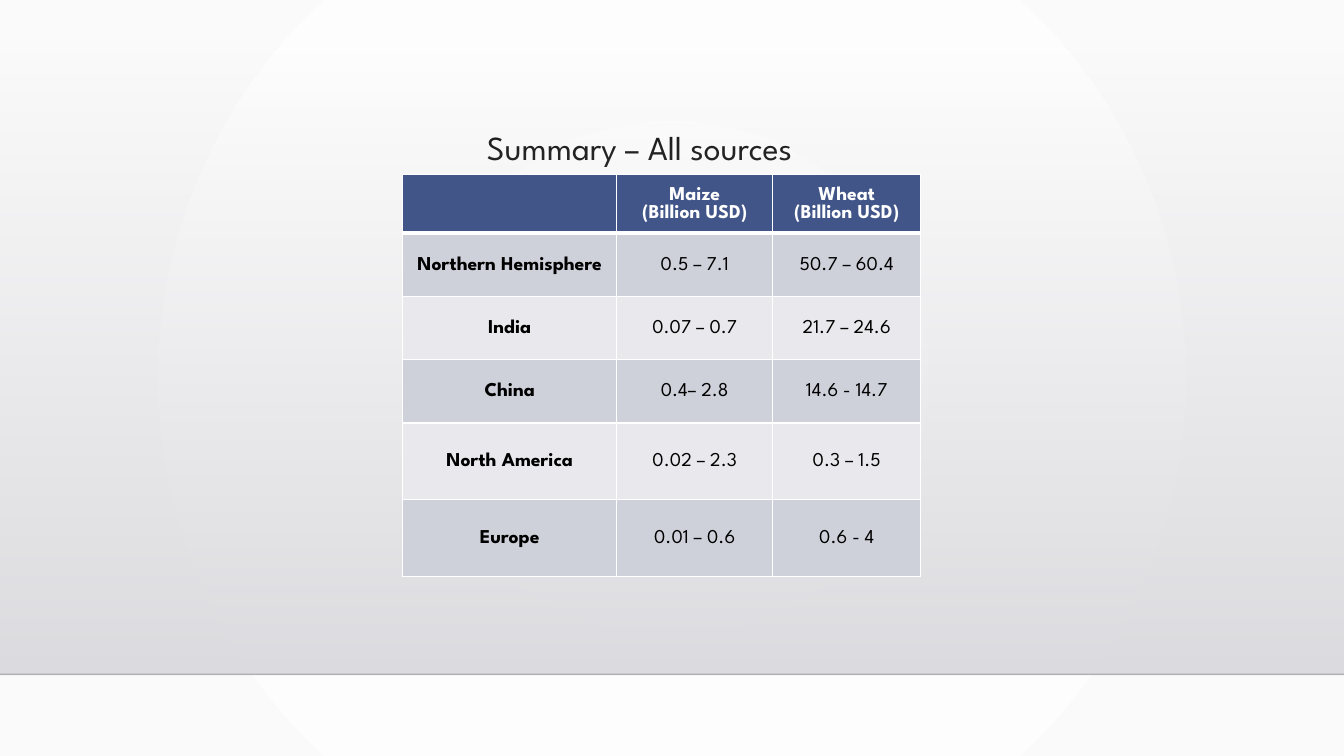
"""Build a one-slide summary table of maize and wheat values."""
from dataclasses import dataclass

from pptx import Presentation
from pptx.dml.color import RGBColor
from pptx.enum.shapes import MSO_CONNECTOR, MSO_SHAPE
from pptx.enum.text import MSO_ANCHOR, PP_ALIGN
from pptx.oxml import parse_xml
from pptx.util import Pt

TITLE = "Summary – All sources"
ROWS = [
    ("", "Maize\n(Billion USD)", "Wheat\n(Billion USD)"),
    ("Northern Hemisphere", "0.5 – 7.1", "50.7 – 60.4"),
    ("India", "0.07 – 0.7", "21.7 – 24.6"),
    ("China", "0.4– 2.8", "14.6 - 14.7"),
    ("North America", "0.02 – 2.3", "0.3 – 1.5"),
    ("Europe", "0.01 – 0.6", "0.6 - 4"),
]
WIDTHS = [153, 111.4, 105.8]
HEIGHTS = [41.8, 45.2, 45.2, 45.2, 54.8, 54.8]
WIDE, HIGH = 960, 540
FLOOR = 481.7
NS = 'xmlns:a="http://schemas.openxmlformats.org/drawingml/2006/main"'


@dataclass(frozen=True)
class Theme:
    """Colours, font and type sizes."""
    font: str = "League Spartan"
    head: str = "415588"
    bands: tuple = ("CFD1DA", "E9E9ED")
    ink: str = "000000"
    white: str = "FFFFFF"
    edge: str = "FAFAFA"
    mist: str = "DCDCE0"
    base: str = "DEDEE2"
    rule: str = "000001"
    big: int = 24
    small: int = 14


LOOK = Theme()


def write(frame, text, size=LOOK.small, color=LOOK.ink, bold=False,
          align=PP_ALIGN.CENTER, space=None):
    """Fill a text frame with formatted lines."""
    frame.text = text
    for para in frame.paragraphs:
        para.alignment = align
        if space:
            para.line_spacing = space
        for run in para.runs:
            font = run.font
            font.name, font.size, font.bold = LOOK.font, Pt(size), bold
            font.color.rgb = RGBColor.from_string(color)


def shade(solid, stops, path):
    """Swap a solid fill element for a gradient."""
    marks = "".join(
        f'<a:gs pos="{pos * 1000}"><a:srgbClr val="{color}">'
        f'<a:alpha val="{alpha * 1000}"/></a:srgbClr></a:gs>'
        for pos, color, alpha in stops)
    grad = parse_xml(f'<a:gradFill {NS} rotWithShape="1"><a:gsLst>{marks}'
                     f'</a:gsLst>{path}</a:gradFill>')
    solid.getparent().replace(solid, grad)


def border(cell, top, base):
    """Draw white lines on the four sides of a cell."""
    props = cell._tc.get_or_add_tcPr()
    sides = {"lnL": 1, "lnR": 1, "lnT": top, "lnB": base}
    for spot, (tag, width) in enumerate(sides.items()):
        props.insert(spot, parse_xml(
            f'<a:{tag} {NS} w="{Pt(width)}"><a:solidFill><a:srgbClr '
            f'val="{LOOK.white}"/></a:solidFill></a:{tag}>'))


def scene(slide):
    """Paint the backdrop, the panel and the floor line."""
    slide.background.fill.solid()
    shade(slide.element.xpath(".//p:bgPr/a:solidFill")[0],
          [(0, LOOK.white, 100), (100, LOOK.edge, 100)],
          '<a:path path="circle"><a:fillToRect l="50000" t="50000" '
          'r="50000" b="50000"/></a:path>')
    top = 36.7
    panel = slide.shapes.add_shape(MSO_SHAPE.RECTANGLE, 0, Pt(top), Pt(WIDE),
                                   Pt(FLOOR - top))
    panel.shadow.inherit = False
    panel.line.fill.background()
    panel.fill.solid()
    shade(panel.element.xpath("./p:spPr/a:solidFill")[0],
          [(0, LOOK.mist, 0), (100, LOOK.base, 100)],
          '<a:lin ang="5400000" scaled="0"/>')
    rule = slide.shapes.add_connector(MSO_CONNECTOR.STRAIGHT, 0, Pt(FLOOR),
                                      Pt(WIDE), Pt(FLOOR))
    rule.line.width = Pt(1)
    rule.line.color.rgb = RGBColor.from_string(LOOK.rule)
    rule.element.xpath(".//a:ln//a:srgbClr")[0].append(
        parse_xml(f'<a:alpha {NS} val="20000"/>'))
    rule.element.spPr.append(parse_xml(f"<a:effectLst {NS}/>"))


def grid(slide):
    """Add the table of values."""
    table = slide.shapes.add_table(
        len(ROWS), len(WIDTHS), Pt(287.6), Pt(124.8),
        Pt(sum(WIDTHS)), Pt(sum(HEIGHTS))).table
    for col, width in zip(table.columns, WIDTHS):
        col.width = Pt(width)
    for r, (row, height) in enumerate(zip(ROWS, HEIGHTS)):
        table.rows[r].height = Pt(height)
        head = r == 0
        tint = LOOK.head if head else LOOK.bands[(r - 1) % 2]
        for c, text in enumerate(row):
            cell = table.cell(r, c)
            cell.fill.solid()
            cell.fill.fore_color.rgb = RGBColor.from_string(tint)
            border(cell, top=3 if r == 1 else 1, base=3 if head else 1)
            cell.vertical_anchor = MSO_ANCHOR.MIDDLE
            cell.margin_left = cell.margin_right = cell.margin_top = Pt(0.7)
            cell.margin_bottom = 0
            write(cell.text_frame, text, bold=head or c == 0,
                  color=LOOK.white if head else LOOK.ink)


def main():
    """Assemble and save the slide."""
    deck = Presentation()
    deck.slide_width, deck.slide_height = Pt(WIDE), Pt(HIGH)
    slide = deck.slides.add_slide(deck.slide_layouts[5])
    scene(slide)
    grid(slide)
    title = slide.shapes.title
    title.left, title.top = Pt(340.6), Pt(90)
    title.width, title.height = Pt(278.6), Pt(34.6)
    title.text_frame.vertical_anchor = MSO_ANCHOR.TOP
    write(title.text_frame, TITLE, size=LOOK.big, align=PP_ALIGN.LEFT,
          space=0.9)
    deck.save("out.pptx")


if __name__ == "__main__":
    main()
